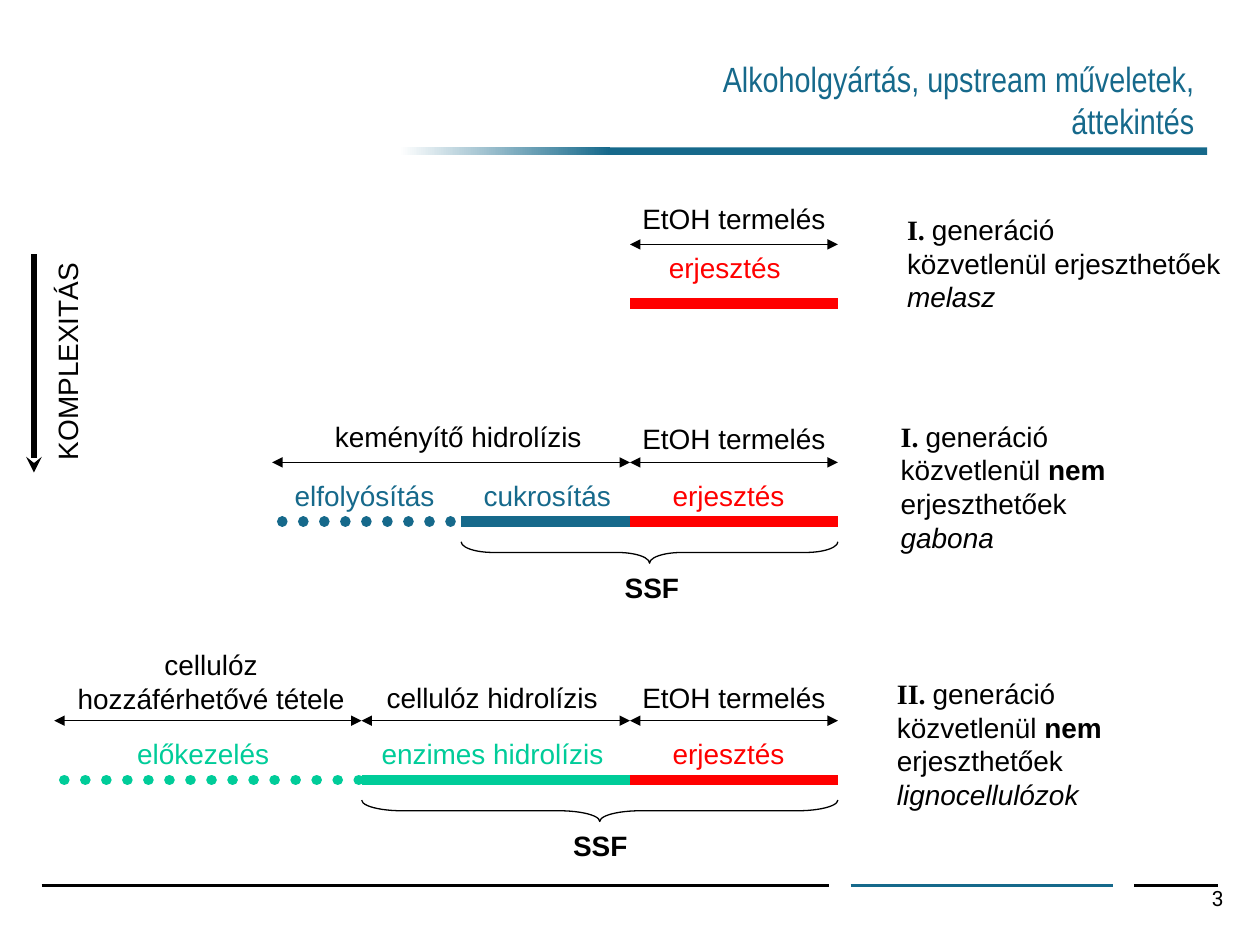
from pptx import Presentation
from pptx.dml.color import RGBColor as RGB
from pptx.enum.dml import MSO_LINE as DASH
from pptx.enum.shapes import MSO_CONNECTOR as CONN, MSO_SHAPE as SHAPE
from pptx.enum.text import MSO_ANCHOR as ANCHOR, MSO_AUTO_SIZE as AUTO, PP_ALIGN as ALIGN
from pptx.oxml.ns import qn
from pptx.util import Inches, Pt
from lxml.etree import SubElement

COLORS = {"black": "000000", "white": "FFFFFF", "blue": "16698B",
          "red": "FF0000", "green": "00CC99"}
COLUMNS, ROWS = 10, 7.5
CELL = Inches(1)
FERMENT, END = 5, 6.65
BARS = (2.41, 4.14, 6.19)
ARROW_LIFT, TEXT_H = 0.47, 0.37

STAGES = (
    (0, FERMENT, END, "red", False, "erjesztés", 5.21, 1.09, 0.47),
    (1, FERMENT, END, "red", False, "erjesztés", 5.24, 1.09, 0.39),
    (1, 2.24, 3.66, "blue", True, "elfolyósítás", 2.24, 1.31, 0.39),
    (1, 3.66, FERMENT, "blue", False, "cukrosítás", 3.74, 1.22, 0.39),
    (2, FERMENT, END, "red", False, "erjesztés", 5.24, 1.09, 0.39),
    (2, 0.51, 2.88, "green", True, "előkezelés", 0.99, 1.25, 0.39),
    (2, 2.87, FERMENT, "green", False, "enzimes hidrolízis", 2.93, 1.97, 0.39),
)
SPANS = (
    (0, FERMENT, END, "EtOH termelés", 5, 1.66, 0.39),
    (1, FERMENT, END, "EtOH termelés", 5, 1.66, 0.37),
    (1, 2.16, FERMENT, "keményítő hidrolízis", 2.56, 2.16, 0.39),
    (2, FERMENT, END, "EtOH termelés", 5, 1.66, 0.37),
    (2, 2.87, FERMENT, "cellulóz hidrolízis", 2.97, 1.88, 0.37),
)
BRACES = ((1, 3.66, 1.5, 4.86), (2, 2.87, 1.89, 4.45))
ROMAN = {"font": "Times New Roman", "bold": True}
BOLD, ITALIC = {"bold": True}, {"italic": True}
GENERATIONS = (
    (7.1, 1.64, 2.69, False, (
        (("I. ", ROMAN), ("generáció", {})),
        (("közvetlenül erjeszthetőek", {}),),
        (("melasz", ITALIC),))),
    (7.05, 3.28, 2.36, True, (
        (("I. ", ROMAN), ("generáció", {})),
        (("közvetlenül ", {}), ("nem", BOLD), (" erjeszthetőek", {})),
        (("gabona", ITALIC),))),
    (7.02, 5.32, 2.08, False, (
        (("II. ", ROMAN), ("generáció", {})),
        (("közvetlenül ", {}), ("nem", BOLD)),
        (("erjeszthetőek", {}),),
        (("lignocellulózok", ITALIC),))),
)


def grid(*cells):
    """Turn grid cells into slide lengths."""
    return [round(c * CELL) for c in cells]


def rgb(name):
    """Look up a named colour."""
    return RGB.from_string(COLORS[name])


def add_run(p, text, color="black", size=16, font="Arial", bold=False, italic=False):
    """Add one formatted run to a paragraph."""
    r = p.add_run()
    r.text = text
    f = r.font
    f.name, f.size, f.bold, f.italic = font, Pt(size), bold, italic
    f.color.rgb = rgb(color)


def add_lines(p, lines, **style):
    """Write lines of runs with a break between neighbours."""
    for i, line in enumerate(lines):
        if i:
            p.add_line_break()
        for text, own in line:
            add_run(p, text, **{**style, **own})


def add_text(s, x, y, w, lines, h=TEXT_H, wrap=False, align=ALIGN.LEFT, **style):
    """Add a text box holding one string or lines of runs."""
    sp = s.shapes.add_textbox(*grid(x, y, w, h))
    tf = sp.text_frame
    tf.word_wrap, tf.auto_size = wrap, AUTO.SHAPE_TO_FIT_TEXT
    p = tf.paragraphs[0]
    p.alignment = align
    add_lines(p, (((lines, {}),),) if isinstance(lines, str) else lines, **style)
    return sp


def add_line(s, x1, y1, x2, y2, color="black", width=0.75, head=None, tail=None, dotted=False):
    """Add a straight line with optional dots and arrowheads."""
    sp = s.shapes.add_connector(CONN.STRAIGHT, *grid(x1, y1, x2, y2))
    sp.line.width = Pt(width)
    sp.line.color.rgb = rgb(color)
    ln = sp.line._get_or_add_ln()
    if dotted:
        sp.line.dash_style = DASH.ROUND_DOT
        ln.set("cap", "rnd")
    for tag, kind in (("a:headEnd", head), ("a:tailEnd", tail)):
        if kind:
            SubElement(ln, qn(tag)).set("type", kind)
    SubElement(sp._element.spPr, qn("a:effectLst"))


def add_bar(s, x, w, faded=False):
    """Add a part of the bar under the title."""
    sp = s.shapes.add_shape(SHAPE.RECTANGLE, *grid(x, 1.17, w, 0.06))
    sp.shadow.inherit = False
    sp.line.fill.background()
    if faded:
        sp.fill.gradient()
        sp.fill.gradient_angle = 0
        for stop, name in zip(sp.fill.gradient_stops, ("white", "blue")):
            stop.color.rgb = rgb(name)
    else:
        sp.fill.solid()
        sp.fill.fore_color.rgb = rgb("blue")


def add_brace(s, x1, x2, y, curve):
    """Add a brace lying under the columns x1 to x2."""
    depth, span = 0.17, x2 - x1
    sp = s.shapes.add_shape(SHAPE.RIGHT_BRACE, *grid(
        (x1 + x2 - depth) / 2, y + (depth - span) / 2, depth, span))
    sp.rotation = 90
    sp.adjustments[0], sp.adjustments[1] = curve, 0.5
    sp.shadow.inherit = False
    sp.fill.background()
    sp.line.width = Pt(0.75)
    sp.line.color.rgb = rgb("black")


def add_frame(s):
    """Add the title, its bar, the footer rules and the page number."""
    sp = s.shapes.title
    sp.left, sp.top, sp.width, sp.height = grid(2.75, 0.33, 6.83, 0.92)
    tf = sp.text_frame
    tf.word_wrap, tf.vertical_anchor = True, ANCHOR.MIDDLE
    p = tf.paragraphs[0]
    p.alignment, p.line_spacing = ALIGN.RIGHT, 1
    add_lines(p, ((("Alkoholgyártás, upstream műveletek,", {}),), (("áttekintés", {}),)),
              color="blue", size=20, font="Arial Narrow")
    add_bar(s, 3.17, 1.67, faded=True)
    add_bar(s, 4.83, 4.75)
    for x1, x2, color in ((0.33, 6.58, "black"), (6.75, 8.83, "blue"), (9, 9.67, "black")):
        add_line(s, x1, 7.03, x2, 7.03, color, 1.5)
    add_text(s, 8.31, 6.98, 1.5, "3", h=0.33, wrap=True, align=ALIGN.RIGHT,
             size=12, font="Roboto")


def add_process(s):
    """Add the stages, their spans and the joint steps of each row."""
    for row, x1, x2, color, dotted, text, x, w, lift in STAGES:
        y = BARS[row]
        add_line(s, x1, y, x2, y, color, 6, dotted=dotted)
        add_text(s, x, y - lift, w, text, color=color)
    for row, x1, x2, text, x, w, lift in SPANS:
        y = BARS[row] - ARROW_LIFT
        add_line(s, x1, y, x2, y, head="triangle", tail="triangle")
        add_text(s, x, y - lift, w, text)
    y = BARS[2] - ARROW_LIFT
    add_line(s, 0.43, y, 2.87, y, head="triangle", tail="triangle")
    add_text(s, 0.08, 5.09, 3.19, ((("cellulóz", {}),), (("hozzáférhetővé tétele", {}),)),
             h=0.64, wrap=True, align=ALIGN.CENTER)
    for row, x1, curve, x in BRACES:
        add_brace(s, x1, END, BARS[row] + 0.16, curve)
        add_text(s, x, BARS[row] + 0.34, 0.69, "SSF", bold=True)


def main():
    """Build the slide and save it."""
    prs = Presentation()
    prs.slide_width, prs.slide_height = grid(COLUMNS, ROWS)
    s = prs.slides.add_slide(prs.slide_layouts[5])
    add_frame(s)
    add_process(s)
    add_line(s, 0.27, 2.02, 0.27, 3.75, width=3, tail="stealth")
    add_text(s, -0.35, 2.68, 1.77, "KOMPLEXITÁS").rotation = 270
    for x, y, w, wrap, lines in GENERATIONS:
        add_text(s, x, y, w, lines, h=1.17, wrap=wrap)
    prs.save("out.pptx")


if __name__ == "__main__":
    main()
